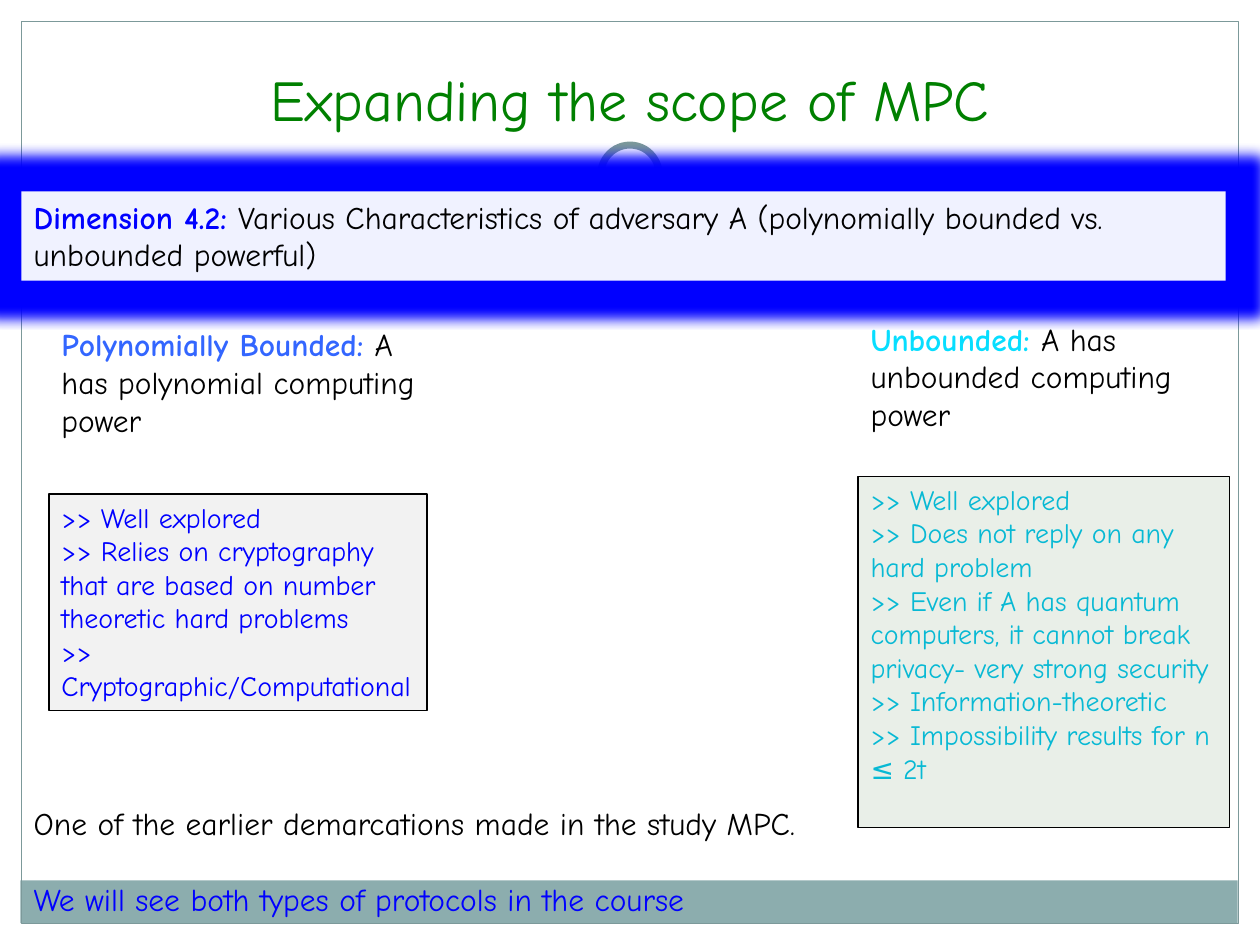
import pptx
import pptx.util
import pptx.dml.color
import pptx.enum.dml
import pptx.enum.shapes
import pptx.enum.text
import pptx.oxml
from lxml import etree

Cm, Pt = pptx.util.Cm, pptx.util.Pt
RGBColor = pptx.dml.color.RGBColor
SHAPE = pptx.enum.shapes.MSO_SHAPE
ALIGN = pptx.enum.text.PP_ALIGN
ANCHOR = pptx.enum.text.MSO_ANCHOR

FONT = "Comic Neue"
WHITE = RGBColor(0xFF, 0xFF, 0xFF)
BLACK = RGBColor(0, 0, 0)
GREEN = RGBColor(0, 0x80, 0)
BLUE = RGBColor(0, 0, 0xFF)
SKY = RGBColor(0x33, 0x66, 0xFF)
CYAN = RGBColor(0x07, 0xDE, 0xFF)
TEAL = RGBColor(0x08, 0xB9, 0xD4)
SLATE = RGBColor(0x7C, 0x99, 0x9A)
SAGE = RGBColor(0x8C, 0xAD, 0xAE)
PALE_BLUE = RGBColor(0xF0, 0xF2, 0xFF)
PALE_GREY = RGBColor(0xF2, 0xF2, 0xF2)
PALE_GREEN = RGBColor(0xE9, 0xEF, 0xE8)

TITLE = "Expanding the scope of MPC"
DIMENSION = ("Dimension 4.2: ",
             "Various Characteristics of adversary A (polynomially bounded vs. unbounded powerful)")
ADVERSARIES = [
    dict(left=0.99, width=7.62, term="Polynomially Bounded: ", term_color=SKY,
         meaning="A has polynomial computing power", meaning_top=6.43,
         notes_top=9.96, notes_height=4.37, fill=PALE_GREY, notes_color=BLUE,
         notes=["Well explored",
                "Relies on cryptography that are based on number theoretic hard problems",
                "Cryptographic/Computational"]),
    dict(left=17.3, width=7.49, term="Unbounded: ", term_color=CYAN,
         meaning="A has unbounded computing power", meaning_top=6.32,
         notes_top=9.6, notes_height=7.09, fill=PALE_GREEN, notes_color=TEAL,
         notes=["Well explored",
                "Does not reply on any hard problem",
                "Even if A has quantum computers, it cannot break privacy- very strong security",
                "Information-theoretic",
                "Impossibility results for n ≤ 2t"]),
]
CLOSING = [("One of the earlier demarcations made in the study MPC.", BLACK),
           ("We will see both types of protocols in the course", BLUE)]

EDGE = 0.43
FRAME_WIDTH = 24.54
RING_CENTER = (12.7, 3.51)

deck = pptx.Presentation()
deck.slide_width, deck.slide_height = Cm(25.4), Cm(19.05)
slide = deck.slides.add_slide(deck.slide_layouts[6])


def add_panel(kind, box, fill=None, line=None, line_width=0.75):
    panel = slide.shapes.add_shape(kind, *map(Cm, box))
    panel.shadow.inherit = False
    if fill is None:
        panel.fill.background()
    else:
        panel.fill.solid()
        panel.fill.fore_color.rgb = fill
    if line is None:
        panel.line.fill.background()
    else:
        panel.line.color.rgb = line
        panel.line.width = Pt(line_width)
    return panel


def add_disc(diameter, **style):
    x, y = RING_CENTER
    return add_panel(SHAPE.OVAL, (x - diameter / 2, y - diameter / 2, diameter, diameter), **style)


def write(holder, paragraphs, size, align=ALIGN.LEFT, anchor=ANCHOR.TOP, gap=0):
    frame = holder.text_frame
    frame.word_wrap = True
    frame.vertical_anchor = anchor
    for index, runs in enumerate(paragraphs):
        paragraph = frame.add_paragraph() if index else frame.paragraphs[0]
        paragraph.alignment = align
        if index and gap:
            paragraph.space_before = Pt(gap)
        for text, color, bold in runs:
            run = paragraph.add_run()
            run.text = text
            run.font.name = FONT
            run.font.size = Pt(size)
            run.font.bold = bold
            run.font.color.rgb = color


def add_text(box, paragraphs, size, **layout):
    write(slide.shapes.add_textbox(*map(Cm, box)), paragraphs, size, **layout)


def add_glow(panel, color, radius):
    effects = panel._element.spPr.find(pptx.oxml.ns.qn("a:effectLst"))
    glow = etree.SubElement(effects, pptx.oxml.ns.qn("a:glow"), rad=str(Pt(radius)))
    etree.SubElement(glow, pptx.oxml.ns.qn("a:srgbClr"), val=str(color))


add_panel(SHAPE.RECTANGLE, (0.41, 17.75, FRAME_WIDTH, 0.86), fill=SAGE)
add_panel(SHAPE.RECTANGLE, (EDGE, EDGE, FRAME_WIDTH, 18.19), line=SLATE)
divider = slide.shapes.add_connector(
    pptx.enum.shapes.MSO_CONNECTOR.STRAIGHT,
    Cm(EDGE), Cm(3.56), Cm(EDGE + FRAME_WIDTH), Cm(3.56))
divider.line.color.rgb = SLATE
divider.line.width = Pt(0.75)
divider.line.dash_style = pptx.enum.dml.MSO_LINE.SQUARE_DOT
etree.SubElement(divider._element.spPr, pptx.oxml.ns.qn("a:effectLst"))
add_disc(1.7, fill=WHITE)
add_disc(1.17, fill=WHITE, line=SLATE, line_width=4)

add_text((1.75, 0.46, 21.9, 2.34), [[(TITLE, GREEN, False)]], 33,
         align=ALIGN.CENTER, anchor=ANCHOR.BOTTOM)

banner = add_panel(SHAPE.RECTANGLE, (EDGE, 3.86, 24.28, 1.8), fill=PALE_BLUE)
add_glow(banner, BLUE, 14)
label, description = DIMENSION
write(banner, [[(label, BLUE, True), (description, BLACK, False)]], 18)

for adversary in ADVERSARIES:
    left, width = adversary["left"], adversary["width"]
    add_text((left, adversary["meaning_top"], width, 2.57),
             [[(adversary["term"], adversary["term_color"], True),
               (adversary["meaning"], BLACK, False)]], 18)
    notes_box = add_panel(
        SHAPE.RECTANGLE, (left, adversary["notes_top"], width, adversary["notes_height"]),
        fill=adversary["fill"], line=BLACK)
    write(notes_box, [[(">> " + note, adversary["notes_color"], False)]
                      for note in adversary["notes"]], 16)

add_text((EDGE, 16.08, 24.38, 2.57),
         [[(text, color, False)] for text, color in CLOSING], 18, gap=21.8)

deck.save("out.pptx")
